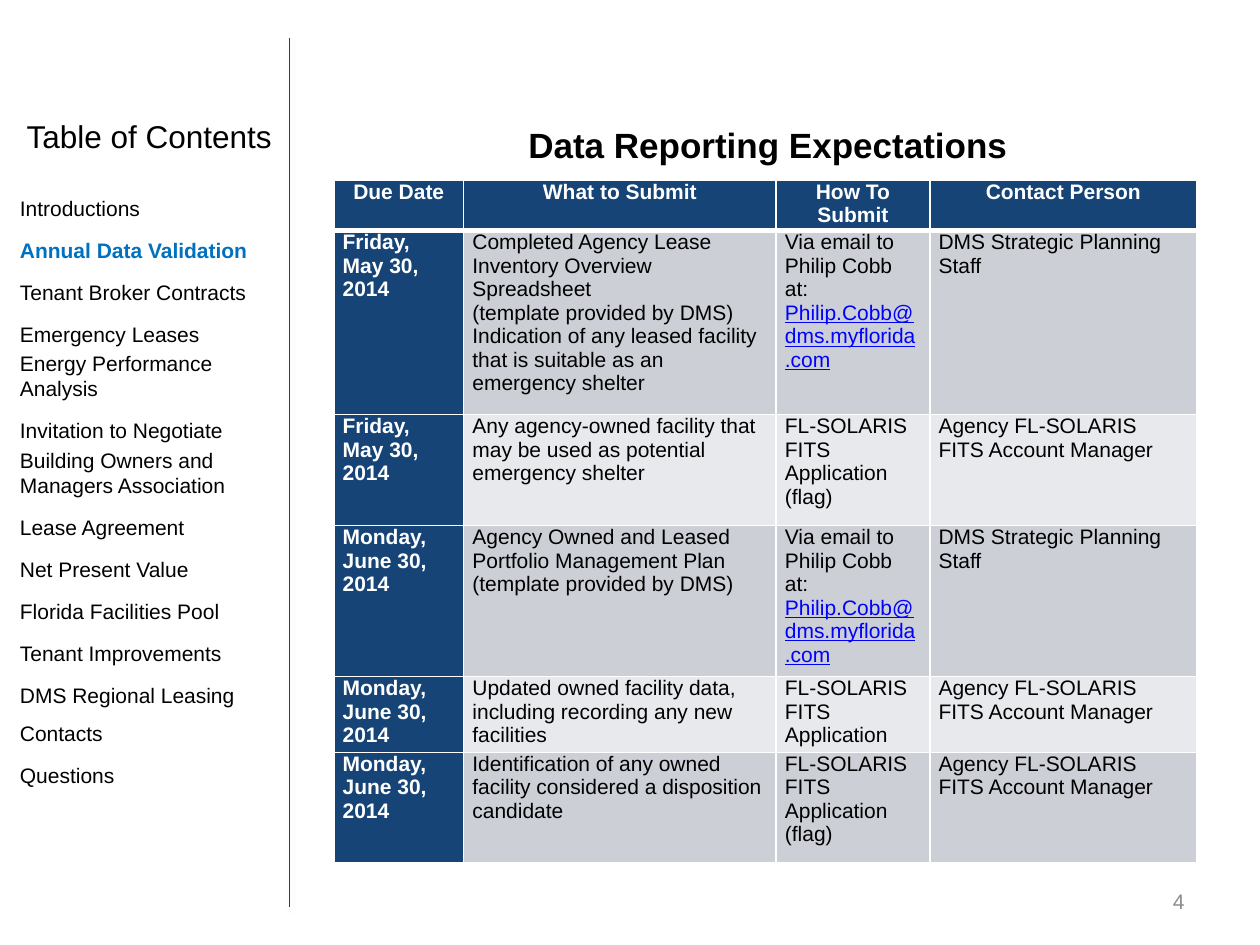
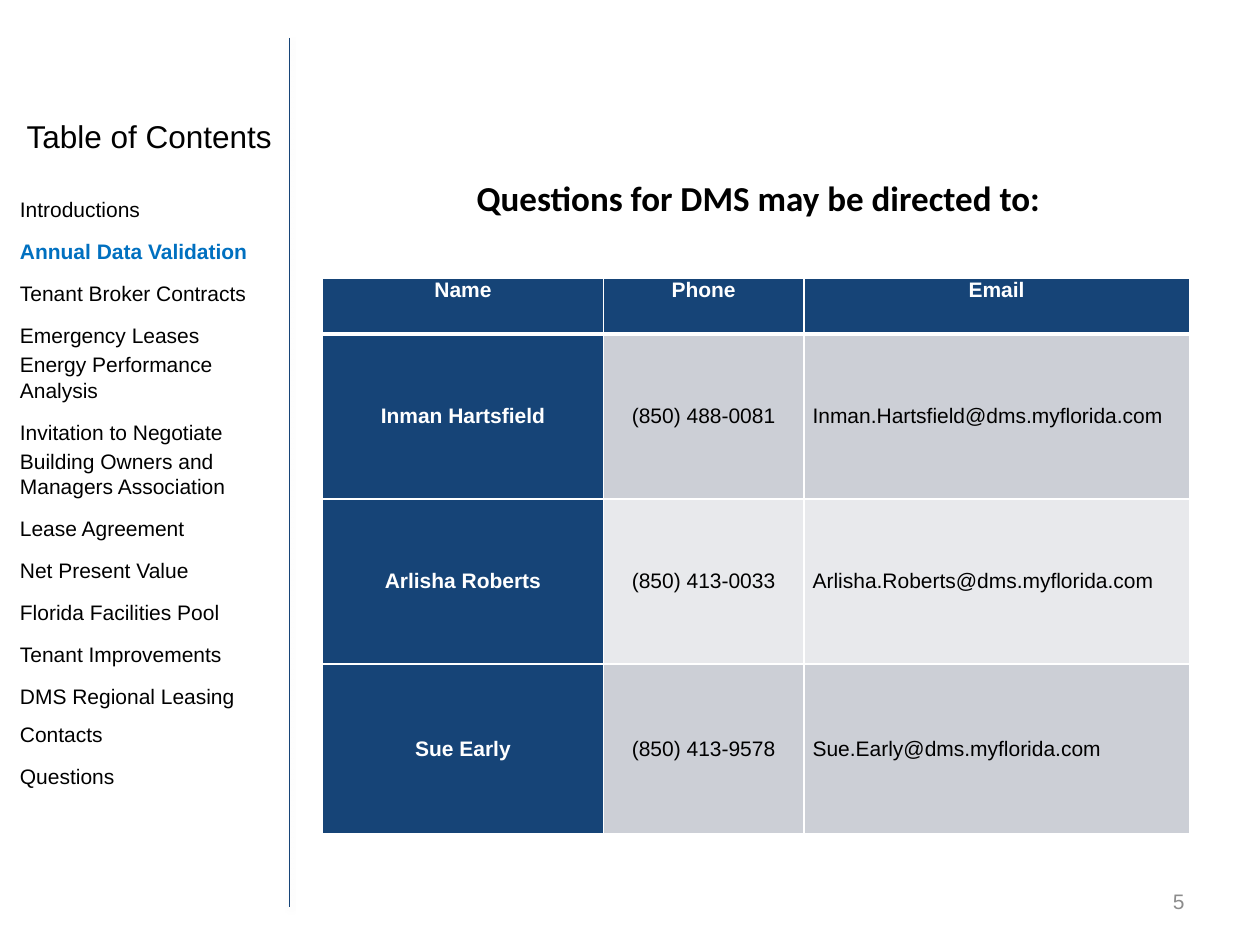
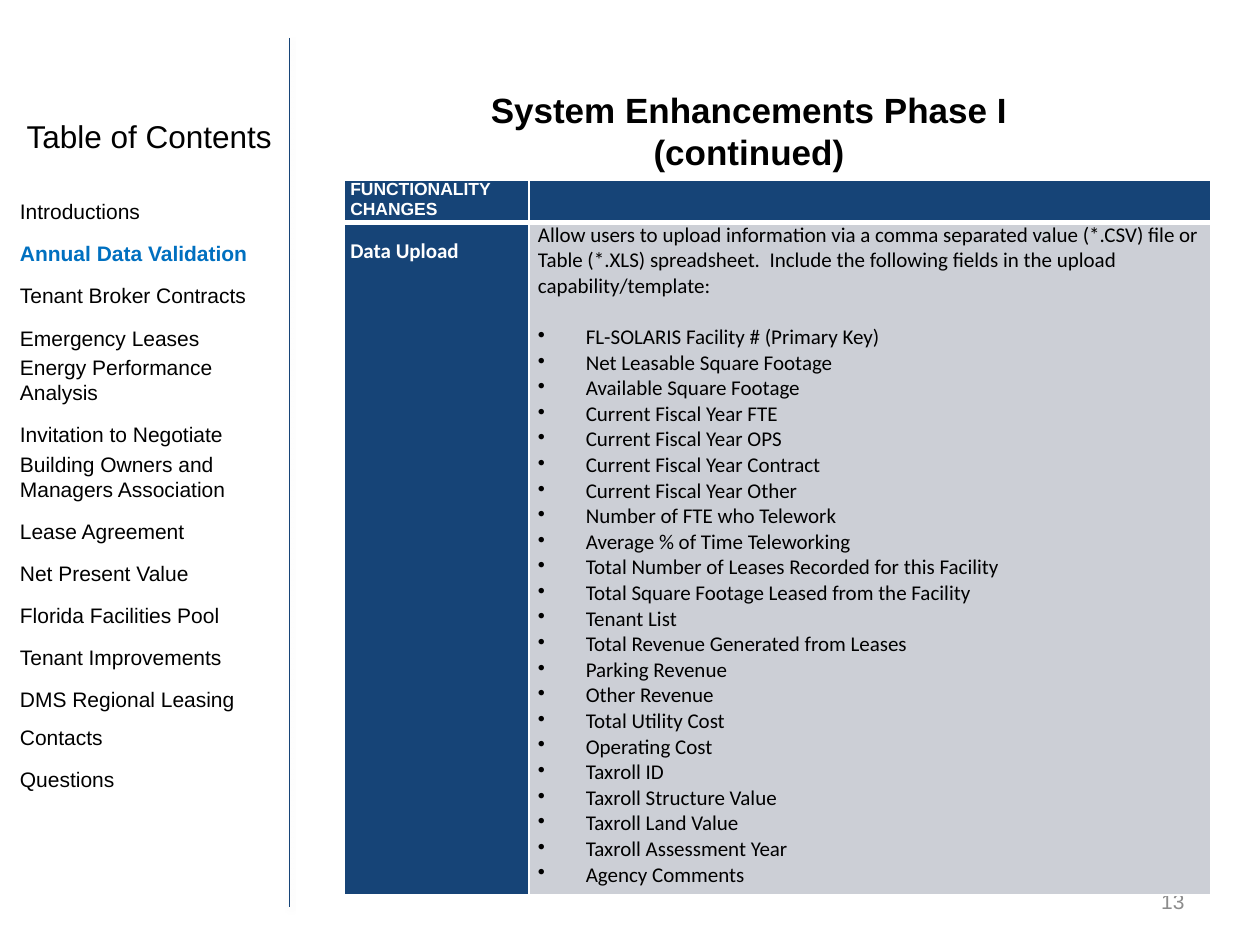
from pptx import Presentation
from pptx.util import Inches, Pt
from pptx.dml.color import RGBColor as Rgb
from pptx.enum.shapes import MSO_CONNECTOR as Conn
from pptx.enum.text import MSO_ANCHOR as Anchor, PP_ALIGN as Align
from pptx.oxml import parse_xml
from pptx.oxml.ns import nsdecls

# Shared look
NAVY, BLACK, WHITE, GREY = "164477", "000000", "FFFFFF", "8C8C8C"
ACTIVE, LINK = "0070C0", "0000FF"
BANDS = ["CCCFD6", "E8E9EC"]
ANS = nsdecls("a")

# Contents panel
TOPICS = [
    "Introductions", "Annual Data Validation", "Tenant Broker Contracts",
    "Emergency Leases", "Energy Performance Analysis",
    "Invitation to Negotiate",
    "Building Owners and Managers Association", "Lease Agreement",
    "Net Present Value", "Florida Facilities Pool", "Tenant Improvements",
    "DMS Regional Leasing Contacts", "Questions",
]
CURRENT = "Annual Data Validation"
TIGHT = {"Energy Performance Analysis",
         "Building Owners and Managers Association"}

# Reporting table
MAY = ["Friday,", "May 30, 2014"]
JUNE = ["Monday,", "June 30, 2014"]
MAIL = [[("Via email to Philip Cobb at: ", {}),
         ("Philip.Cobb@dms.myflorida.com", {"color": LINK, "line": True})]]
FLAG = "FL-SOLARIS FITS Application (flag)"
STAFF = "DMS Strategic Planning Staff"
AGENT = "Agency FL-SOLARIS FITS Account Manager"
TEMPLATE = "(template provided by DMS)"
REPORTS = [
    ["Due Date", "What to Submit", "How To Submit", "Contact Person"],
    [MAY, ["Completed Agency Lease Inventory Overview Spreadsheet", TEMPLATE,
           "Indication of any leased facility that is suitable as an "
           "emergency shelter"], MAIL, STAFF],
    [MAY, "Any agency-owned facility that may be used as potential "
          "emergency shelter", FLAG, AGENT],
    [JUNE, ["Agency Owned and Leased Portfolio Management Plan", TEMPLATE],
     MAIL, STAFF],
    [JUNE, "Updated owned facility data, including recording any new "
           "facilities", "FL-SOLARIS FITS Application", AGENT],
    [JUNE, "Identification of any owned facility considered a disposition "
           "candidate", FLAG, AGENT],
]

# Contact table
PEOPLE = [
    ["Name", "Phone", "Email"],
    ["Inman Hartsfield", "(850) 488-0081",
     "Inman.Hartsfield@dms.myflorida.com"],
    ["Arlisha Roberts", "(850) 413-0033",
     "Arlisha.Roberts@dms.myflorida.com"],
    ["Sue Early", "(850) 413-9578", "Sue.Early@dms.myflorida.com"],
]

# Upload table
UPLOAD = ("Allow users to upload information via a comma separated value "
          "(*.CSV) file or Table (*.XLS) spreadsheet.  Include the following "
          "fields in the upload capability/template:")
FIELDS = [
    "FL-SOLARIS Facility # (Primary Key)", "Net Leasable Square Footage",
    "Available Square Footage", "Current Fiscal Year FTE",
    "Current Fiscal Year OPS", "Current Fiscal Year Contract",
    "Current Fiscal Year Other", "Number of FTE who Telework",
    "Average % of Time Teleworking",
    "Total Number of Leases Recorded for this Facility",
    "Total Square Footage Leased from the Facility", "Tenant List",
    "Total Revenue Generated from Leases", "Parking Revenue",
    "Other Revenue", "Total Utility Cost", "Operating Cost", "Taxroll ID",
    "Taxroll Structure Value", "Taxroll Land Value",
    "Taxroll Assessment Year", "Agency Comments",
]
CHANGES = [["FUNCTIONALITY CHANGES", ""],
           ["Data Upload", [UPLOAD] + FIELDS]]


def paint(color):
    return Rgb.from_string(color)


def style(font, size=12, face="Arial", color=BLACK, bold=False, line=False):
    font.size, font.name, font.bold = Pt(size), face, bold
    font.color.rgb = paint(color)
    if line:
        font.underline = True


def write(frame, text, align=Align.LEFT, anchor=Anchor.TOP, **fmt):
    """Fill a frame; each paragraph is a string or a list of runs."""
    frame.word_wrap = True
    frame.vertical_anchor = anchor
    for i, para in enumerate([text] if isinstance(text, str) else text):
        p = frame.add_paragraph() if i else frame.paragraphs[0]
        p.alignment = align
        for words, extra in [(para, {})] if isinstance(para, str) else para:
            if words:
                run = p.add_run()
                run.text = words
                style(run.font, **{**fmt, **extra})
            else:
                end = p._p.get_or_add_endParaRPr()
                end.set("sz", str(fmt.get("size", 12) * 100))
    return frame.paragraphs


def label(slide, box, text, **fmt):
    shape = slide.shapes.add_textbox(*map(Inches, box))
    return write(shape.text_frame, text, **fmt)


def edge(cell, **widths):
    props = cell._tc.get_or_add_tcPr()
    for side in "LRTB":
        wide = Pt(widths.get(side, 1))
        props.append(parse_xml(
            f'<a:ln{side} {ANS} w="{wide}"><a:solidFill>'
            f'<a:srgbClr val="{WHITE}"/></a:solidFill></a:ln{side}>'))


def indent(p, left, hang=0, bullet=None):
    props = p._p.get_or_add_pPr()
    props.set("marL", str(Inches(left)))
    props.set("indent", str(Inches(hang)))
    if bullet:
        props.append(parse_xml(f'<a:buChar {ANS} char="{bullet}"/>'))


def grid(slide, spot, cols, rows, data, form):
    """Draw a table; form(row, col) gives the text format of a cell."""
    size = sum(cols), sum(rows)
    table = slide.shapes.add_table(
        len(rows), len(cols), *map(Inches, spot + size)).table
    for col, wide in zip(table.columns, cols):
        col.width = Inches(wide)
    for r, high in enumerate(rows):
        table.rows[r].height = Inches(high)
        for c, text in enumerate(data[r]):
            cell = table.cell(r, c)
            head = r == 0 or c == 0
            edge(cell, T=3 if r == 1 else 1, B=1 if r else 3)
            cell.fill.solid()
            cell.fill.fore_color.rgb = paint(NAVY if head
                                             else BANDS[(r - 1) % 2])
            cell.margin_left = cell.margin_right = Inches(0.07)
            cell.margin_top = cell.margin_bottom = 0
            fmt = {"color": WHITE if head else BLACK, "bold": head,
                   **form(r, c)}
            cell.vertical_anchor = fmt.pop("anchor", Anchor.TOP)
            write(cell.text_frame, text, anchor=None, **fmt)
    return table


def page(deck, number, top):
    """Start a slide with the divider, contents panel and number."""
    slide = deck.slides.add_slide(deck.slide_layouts[6])
    rule = slide.shapes.add_connector(
        Conn.STRAIGHT, *map(Inches, (2.3, 0.3, 2.3, 7.2)))
    rule.line.color.rgb = paint(NAVY)
    rule.line.width = Pt(0.75)
    rule._element.spPr.append(parse_xml(
        f'<a:effectLst {ANS}><a:outerShdw blurRad="{Pt(3.1)}" '
        f'dist="{Pt(1.6)}" dir="5400000"><a:srgbClr val="{BLACK}">'
        '<a:alpha val="38000"/></a:srgbClr></a:outerShdw></a:effectLst>'))
    label(slide, (0.07, 0.88, 2.23, 0.4), "Table of Contents", size=18,
          align=Align.CENTER)
    mark = {"color": ACTIVE, "bold": True}
    items = [[(t, mark if t == CURRENT else {})] for t in TOPICS]
    paras = label(slide, (0, top, 2.29, 5.45), items)
    for i, (p, topic) in enumerate(zip(paras, TOPICS)):
        indent(p, 0.06)
        p.line_spacing = 1.0 if topic in TIGHT else 1.5
        if i:
            p.space_before = Pt(2.4)
    label(slide, (7.17, 6.95, 2.33, 0.4), str(number), color=GREY,
          align=Align.RIGHT, anchor=Anchor.MIDDLE)
    return slide


def title(slide, box, text, **fmt):
    label(slide, box, text, size=20, bold=True, align=Align.CENTER, **fmt)


def reports(deck):
    slide = page(deck, 4, 1.4)
    title(slide, (2.68, 0.93, 6.83, 0.44), "Data Reporting Expectations")
    grid(slide, (2.65, 1.43), (1.03, 2.48, 1.22, 2.12),
         (0.31, 1.46, 0.88, 1.17, 0.59, 0.88), REPORTS,
         lambda r, c: {"align": Align.LEFT if r else Align.CENTER})


def people(deck):
    slide = page(deck, 5, 1.41)
    title(slide, (2.58, 1.3, 6.88, 0.54),
          "Questions for DMS may be directed to:", face="Calibri",
          anchor=Anchor.MIDDLE)
    grid(slide, (2.56, 2.21), (2.23, 1.59, 3.06), (0.44, 1.31, 1.31, 1.35),
         PEOPLE, lambda r, c: {
             "align": Align.JUSTIFY if r and c == 2 else Align.CENTER,
             "anchor": Anchor.MIDDLE if r else Anchor.TOP})


def changes(deck):
    slide = page(deck, 13, 1.43)
    table = grid(slide, (2.73, 1.43), (1.47, 5.41), (0.24, 5.34), CHANGES,
                 lambda r, c: {"size": 12 if r else 10,
                               "face": "Calibri" if r else "Arial"})
    for r in range(2):
        side = table.cell(r, 0)
        side.margin_left = side.margin_right = Inches(0.05)
    table.cell(1, 0).margin_top = Inches(0.13)
    fields = table.cell(1, 1).text_frame.paragraphs[1:]
    fields[0].space_before = Pt(14.6)
    for p in fields:
        indent(p, 0.38, -0.38, "•")
    title(slide, (3.11, 0.65, 5.67, 0.77),
          "System Enhancements Phase I (continued)")


def main():
    deck = Presentation()
    deck.slide_width, deck.slide_height = Inches(10), Inches(7.5)
    for build in (reports, people, changes):
        build(deck)
    deck.save("out.pptx")


if __name__ == "__main__":
    main()
